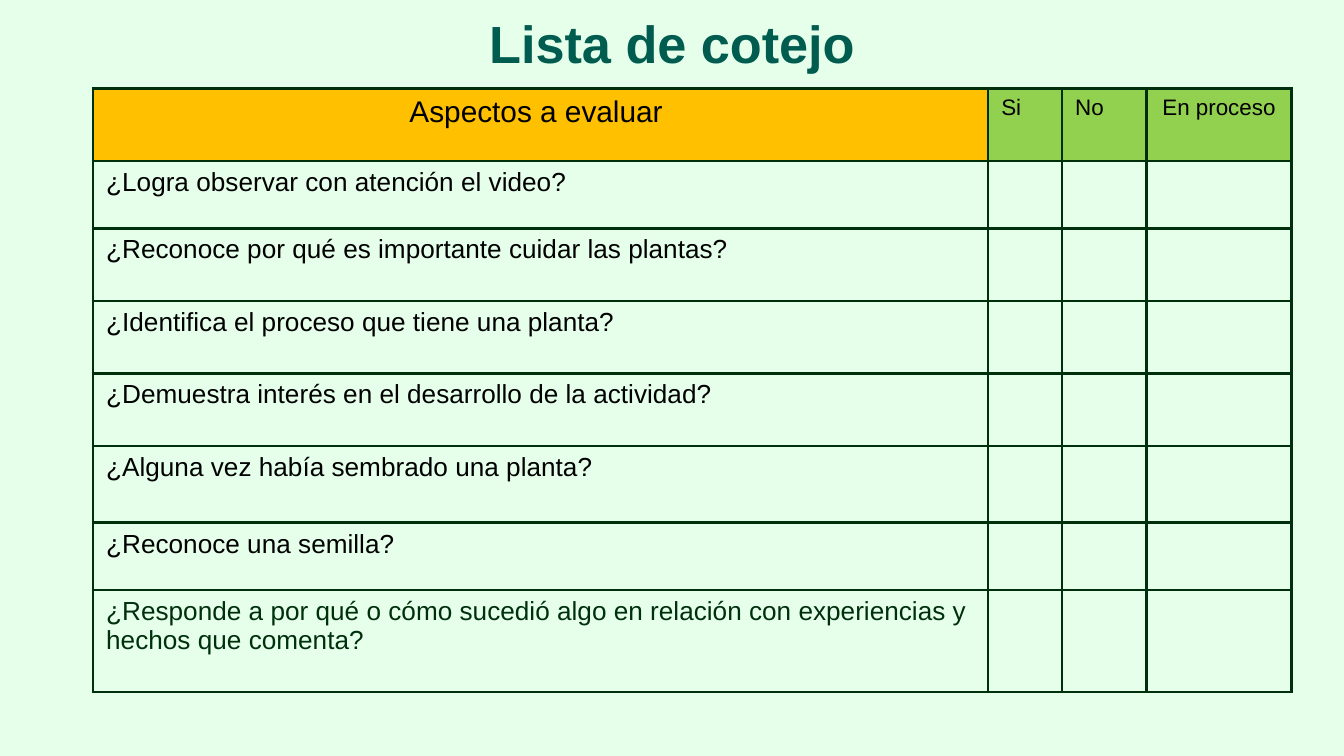
from lxml import etree
from pptx import Presentation
from pptx.dml.color import RGBColor
from pptx.enum.text import MSO_ANCHOR, PP_ALIGN
from pptx.oxml.ns import qn
from pptx.util import Inches, Pt

LEFT, CENTER = PP_ALIGN.LEFT, PP_ALIGN.CENTER
MIDDLE = MSO_ANCHOR.MIDDLE

MINT = RGBColor(0xE5, 0xFF, 0xEB)
TEAL = RGBColor(0x00, 0x5C, 0x4F)
DARK_GREEN = RGBColor(0x00, 0x30, 0x0B)
AMBER = RGBColor(0xFF, 0xC0, 0x00)
LIME = RGBColor(0x92, 0xD0, 0x50)
BLACK = RGBColor(0x00, 0x00, 0x00)

FONT = "Arial"
SLIDE_WIDTH = Inches(10)
SLIDE_HEIGHT = SLIDE_WIDTH * 9 // 16
BORDER_WIDTH = Pt(1.5)
COL_WIDTHS = [6.66, 0.55, 0.63, 1.08]
ROW_HEIGHTS = [0.54, 0.5, 0.54, 0.54, 0.54, 0.57, 0.5, 0.76]

# text, size, alignment, fill
HEADERS = [
    ("Aspectos a evaluar ", 16, CENTER, AMBER),
    ("Si", 12, LEFT, LIME),
    ("No", 12, LEFT, LIME),
    ("En proceso", 12, CENTER, LIME),
]
QUESTIONS = [
    "¿Logra observar con atención el video?",
    "¿Reconoce por qué es importante cuidar las plantas?",
    "¿Identifica el proceso que tiene una planta?",
    "¿Demuestra interés en el desarrollo de la actividad?",
    "¿Alguna vez había sembrado una planta?",
    "¿Reconoce una semilla?",
    "¿Responde a por qué o cómo sucedió algo en relación con experiencias "
    "y hechos que comenta?",
]


def write_text(tf, text, size=14, color=BLACK, bold=False, align=LEFT):
    p = tf.paragraphs[0]
    p.alignment = align
    r = p.add_run()
    r.text = text
    r.font.name = FONT
    r.font.size = Pt(size)
    r.font.bold = bold
    r.font.color.rgb = color


def add_title(s, text):
    box = s.shapes.add_textbox(Inches(0.78), 0, Inches(8.44), Inches(0.63))
    tf = box.text_frame
    tf.word_wrap = True
    tf.vertical_anchor = MIDDLE
    tf.margin_top = tf.margin_bottom = Inches(0.1)
    write_text(tf, text, size=28, color=TEAL, bold=True, align=CENTER)


def set_borders(cell):
    tc_pr = cell._tc.get_or_add_tcPr()
    for side in ("a:lnL", "a:lnR", "a:lnT", "a:lnB"):
        ln = etree.SubElement(tc_pr, qn(side), w=str(BORDER_WIDTH))
        fill = etree.SubElement(ln, qn("a:solidFill"))
        etree.SubElement(fill, qn("a:srgbClr"), val=str(DARK_GREEN))


def add_grid(s):
    """Add the bordered table, with unfilled cells."""
    frame = s.shapes.add_table(
        len(ROW_HEIGHTS), len(COL_WIDTHS), Inches(0.69), Inches(0.66),
        Inches(sum(COL_WIDTHS)), Inches(sum(ROW_HEIGHTS)))
    table = frame.table
    table.first_row = table.horz_banding = False
    for col, width in zip(table.columns, COL_WIDTHS):
        col.width = Inches(width)
    for row, height in zip(table.rows, ROW_HEIGHTS):
        row.height = Inches(height)
    for cell in table.iter_cells():
        set_borders(cell)
        cell.fill.background()
    return table


def fill_checklist(table):
    for col, (text, size, align, color) in enumerate(HEADERS):
        cell = table.cell(0, col)
        cell.fill.solid()
        cell.fill.fore_color.rgb = color
        write_text(cell.text_frame, text, size=size, align=align)
    for row, question in enumerate(QUESTIONS, start=1):
        color = DARK_GREEN if row == len(QUESTIONS) else BLACK
        write_text(table.cell(row, 0).text_frame, question, color=color)


def main():
    prs = Presentation()
    prs.slide_width, prs.slide_height = SLIDE_WIDTH, SLIDE_HEIGHT
    s = prs.slides.add_slide(prs.slide_layouts[6])
    s.background.fill.solid()
    s.background.fill.fore_color.rgb = MINT
    fill_checklist(add_grid(s))
    add_title(s, "Lista de cotejo")
    prs.save("out.pptx")


if __name__ == "__main__":
    main()
